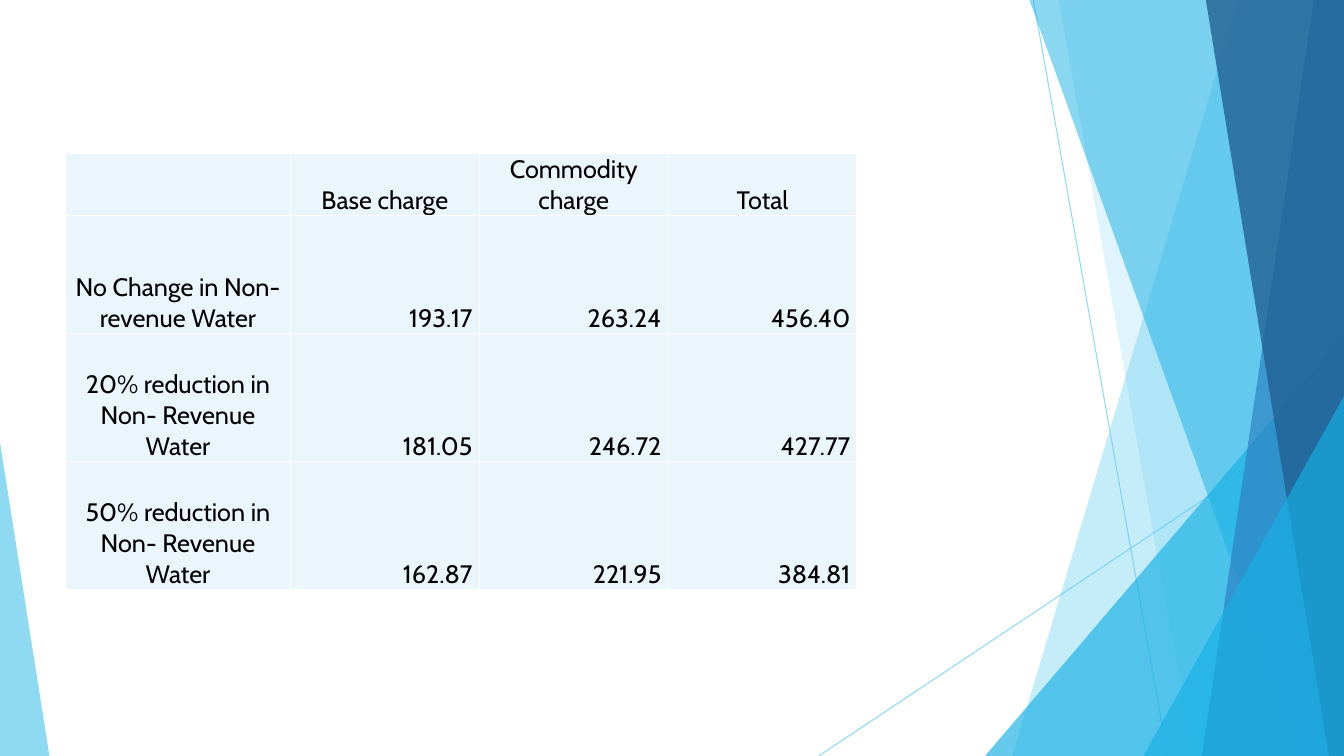
from lxml.etree import SubElement
from pptx import Presentation
from pptx.dml.color import RGBColor
from pptx.enum.shapes import MSO_CONNECTOR, MSO_SHAPE
from pptx.enum.text import MSO_ANCHOR, PP_ALIGN
from pptx.oxml.ns import qn
from pptx.util import Inches, Pt

COLORS = {
    "sky": "5FCBEF",
    "cyan": "17B0E4",
    "blue": "2E83C3",
    "navy": "226292",
    "cell": "EAF6FC",
    "border": "FFFFFF",
    "text": "000000",
}
FONT = "Cabin"
SLIDE_WIDTH, SLIDE_HEIGHT = 13.33, 7.5

HEADERS = ["", "Base charge", "Commodity charge", "Total"]
CHARGES = [
    ("No Change in Non-revenue Water", 193.17, 263.24, 456.40),
    ("20% reduction in Non- Revenue Water", 181.05, 246.72, 427.77),
    ("50% reduction in Non- Revenue Water", 162.87, 221.95, 384.81),
]
ROW_HEIGHTS = [0.62, 1.17, 1.27, 1.27]
LABEL_WIDTH = 2.23


def color(name):
    return RGBColor.from_string(COLORS[name])


def set_opacity(fill_parent, percent):
    """Add an alpha value to the solid fill directly inside the element."""
    solid = fill_parent.find(qn("a:solidFill"))
    SubElement(solid[0], qn("a:alpha"), val=str(percent * 1000))


def paint(shape, fill_name, opacity):
    shape.shadow.inherit = False
    shape.fill.solid()
    shape.fill.fore_color.rgb = color(fill_name)
    shape.line.fill.background()
    set_opacity(shape.element.spPr, opacity)


def add_thin_line(slide, start, end):
    connector = slide.shapes.add_connector(
        MSO_CONNECTOR.STRAIGHT, *(Inches(value) for value in start + end))
    connector.line.color.rgb = color("sky")
    connector.line.width = Pt(0.75)
    properties = connector.element.spPr
    set_opacity(properties.find(qn("a:ln")), 70)
    SubElement(properties, qn("a:effectLst"))


def add_band(slide, box, top_x, bottom_x, fill_name, opacity):
    """Band with a slanted left side that reaches the right edge of the box."""
    left, top, width, height = box
    right, bottom = left + width, top + height
    corners = [(left + top_x, top), (right, top), (right, bottom), (left + bottom_x, bottom)]
    points = [(Inches(x), Inches(y)) for x, y in corners]
    builder = slide.shapes.build_freeform(*points[0])
    builder.add_line_segments(points[1:], close=True)
    paint(builder.convert_to_shape(), fill_name, opacity)


def add_corner(slide, box, width, height, apex, fill_name, opacity):
    """Right triangle in a bottom corner: apex 0 is left, apex 1 is right."""
    box_left, box_top, box_width, box_height = box
    left = box_left + apex * (box_width - width)
    top = box_top + box_height - height
    shape = slide.shapes.add_shape(
        MSO_SHAPE.ISOSCELES_TRIANGLE,
        Inches(left), Inches(top), Inches(width), Inches(height))
    shape.adjustments[0] = apex
    paint(shape, fill_name, opacity)


def add_facets(slide, left, top, width, height):
    """Translucent facets along the right side and in the left corner."""
    box = left, top, width, height
    bottom = top + height
    add_thin_line(slide, (left + 10.25, top), (left + 11.58, bottom))
    add_thin_line(slide, (left + width, top + 4.03), (left + 8.12, bottom))

    add_band(slide, box, 12.28, 10.04, "sky", 36)
    add_band(slide, box, 10.5, 11.83, "sky", 20)
    add_corner(slide, box, 3.56, 4.17, 1, "cyan", 66)
    add_band(slide, box, 10.21, 12.91, "cyan", 50)
    add_band(slide, box, 13.03, 11.92, "blue", 70)
    add_band(slide, box, 11.96, 13.18, "navy", 80)
    add_corner(slide, box, 1.99, 3.57, 1, "cyan", 66)
    add_corner(slide, box, 0.49, 3.11, 0, "sky", 70)


def add_borders(cell):
    properties = cell._tc.get_or_add_tcPr()
    for index, side in enumerate(("a:lnL", "a:lnR", "a:lnT", "a:lnB")):
        line = SubElement(properties, qn(side), w=str(Pt(1)))
        solid = SubElement(line, qn("a:solidFill"))
        SubElement(solid, qn("a:srgbClr"), val=COLORS["border"])
        properties.remove(line)
        properties.insert(index, line)  # borders come before the fill


def fill_cell(cell, text, alignment):
    cell.fill.solid()
    cell.fill.fore_color.rgb = color("cell")
    add_borders(cell)
    cell.vertical_anchor = MSO_ANCHOR.BOTTOM
    cell.margin_left = cell.margin_right = cell.margin_top = Inches(0.01)
    cell.margin_bottom = 0
    paragraph = cell.text_frame.paragraphs[0]
    paragraph.text = text
    paragraph.alignment = alignment
    paragraph.font.size = Pt(18)
    for run in paragraph.runs:
        run.font.name = FONT
        run.font.size = Pt(18)
        run.font.color.rgb = color("text")


def add_charge_table(slide, left, top, width, height):
    rows = [HEADERS] + CHARGES
    frame = slide.shapes.add_table(
        len(rows), len(HEADERS), Inches(left), Inches(top), Inches(width), Inches(height))
    table = frame.table
    table.first_row = table.horz_banding = False

    # Column and row sizes
    value_width = (width - LABEL_WIDTH) / (len(HEADERS) - 1)
    for index, column in enumerate(table.columns):
        column.width = Inches(value_width if index else LABEL_WIDTH)
    for row, row_height in zip(table.rows, ROW_HEIGHTS):
        row.height = Inches(row_height)

    # Labels are centred, amounts are set to the right
    for row_index, values in enumerate(rows):
        for column_index, value in enumerate(values):
            is_label = isinstance(value, str)
            text = value if is_label else f" {value:.2f} "
            alignment = PP_ALIGN.CENTER if is_label else PP_ALIGN.RIGHT
            fill_cell(table.cell(row_index, column_index), text, alignment)


def main():
    presentation = Presentation()
    presentation.slide_width = Inches(SLIDE_WIDTH)
    presentation.slide_height = Inches(SLIDE_HEIGHT)
    slide = presentation.slides.add_slide(presentation.slide_layouts[6])
    add_facets(slide, 0, 0, SLIDE_WIDTH, SLIDE_HEIGHT)
    add_charge_table(slide, 0.65, 1.52, 7.85, sum(ROW_HEIGHTS))
    presentation.save("out.pptx")


if __name__ == "__main__":
    main()
